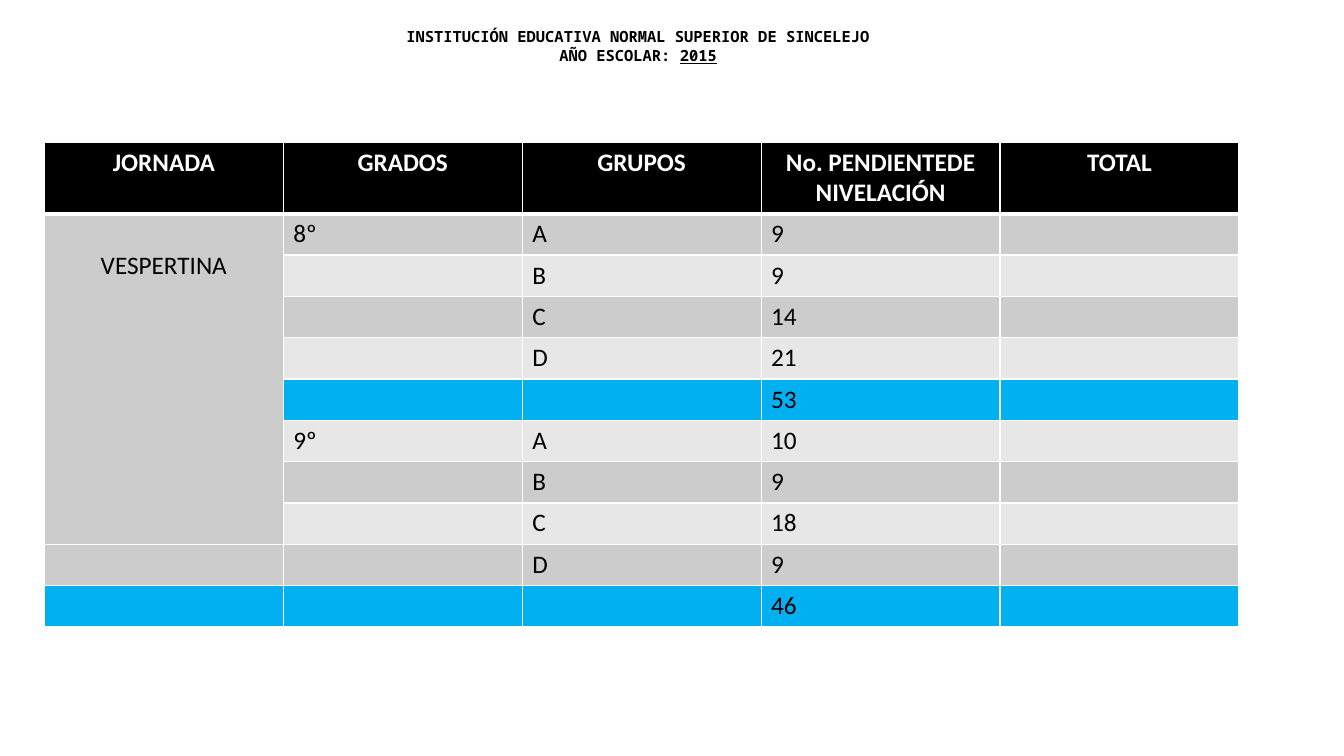
from dataclasses import dataclass

from lxml import etree
from pptx import Presentation
from pptx.dml.color import RGBColor
from pptx.enum import text
from pptx.oxml import ns
from pptx.util import Inches, Pt


@dataclass(frozen=True)
class Theme:
    black: str = "000000"
    white: str = "FFFFFF"
    dark_band: str = "CCCCCC"
    light_band: str = "E7E7E7"
    subtotal: str = "00B0F0"
    title_font: str = "Noto Sans Mono"
    table_font: str = "Calibri"
    title_size: int = 11
    table_size: int = 18


theme = Theme()


def style(para, font, size, color, bold, align):
    para.alignment = align
    para.font.name = font
    para.font.size = Pt(size)
    para.font.bold = bold
    para.font.color.rgb = RGBColor.from_string(color)


def add_borders(cell, bottom):
    """Draw white borders, one point wide except the bottom one."""
    properties = cell._tc.get_or_add_tcPr()
    for side, width in (("L", 1), ("R", 1), ("T", 1), ("B", bottom)):
        line = etree.SubElement(properties, ns.qn(f"a:ln{side}"), w=str(Pt(width)))
        fill = etree.SubElement(line, ns.qn("a:solidFill"))
        etree.SubElement(fill, ns.qn("a:srgbClr"), val=theme.white)


deck = Presentation()
deck.slide_width, deck.slide_height = Inches(13.33), Inches(7.5)
page = deck.slides.add_slide(deck.slide_layouts[5])

title = page.shapes.title
title.left, title.top = Inches(2.08), Inches(0.22)
title.width, title.height = Inches(8.5), Inches(0.47)
frame = title.text_frame
frame.auto_size = text.MSO_AUTO_SIZE.NONE
frame.word_wrap = True
frame.vertical_anchor = text.MSO_ANCHOR.MIDDLE
frame.text = "INSTITUCIÓN EDUCATIVA NORMAL SUPERIOR DE SINCELEJO\nAÑO ESCOLAR: "
year = frame.paragraphs[1].add_run()
year.text = "2015"
year.font.underline = True
for para in frame.paragraphs:
    style(para, theme.title_font, theme.title_size, theme.black, True, text.PP_ALIGN.CENTER)

rows = [
    ("JORNADA", "GRADOS", "GRUPOS", "No. PENDIENTEDE NIVELACIÓN", "TOTAL"),
    ("VESPERTINA", "8º", "A", "9", ""),
    ("", "", "B", "9", ""),
    ("", "", "C", "14", ""),
    ("", "", "D", "21", ""),
    ("", "", "", "53", ""),
    ("", "9º", "A", "10", ""),
    ("", "", "B", "9", ""),
    ("", "", "C", "18", ""),
    ("", "", "D", "9", ""),
    ("", "", "", "46", ""),
]
subtotal_rows = (5, 10)
header_height, row_height = 0.7, 0.41

table = page.shapes.add_table(
    len(rows), len(rows[0]), Inches(0.44), Inches(1.41), Inches(11.87),
    Inches(header_height + row_height * (len(rows) - 1)),
).table
for column in table.columns:
    column.width = Inches(2.37)

for r, values in enumerate(rows):
    header = r == 0
    table.rows[r].height = Inches(header_height if header else row_height)
    if header:
        fill = theme.black
    elif r in subtotal_rows:
        fill = theme.subtotal
    else:
        fill = theme.dark_band if r % 2 else theme.light_band
    for c, value in enumerate(values):
        cell = table.cell(r, c)
        cell.text = value
        centered = header or c == 0
        style(
            cell.text_frame.paragraphs[0], theme.table_font, theme.table_size,
            theme.white if header else theme.black, header,
            text.PP_ALIGN.CENTER if centered else text.PP_ALIGN.LEFT,
        )
        add_borders(cell, bottom=3 if header else 1)
        cell.fill.solid()
        cell.fill.fore_color.rgb = RGBColor.from_string(fill)

shift = table.cell(1, 0)
shift.merge(table.cell(8, 0))
shift.margin_top = Inches(0.36)

deck.save("out.pptx")
